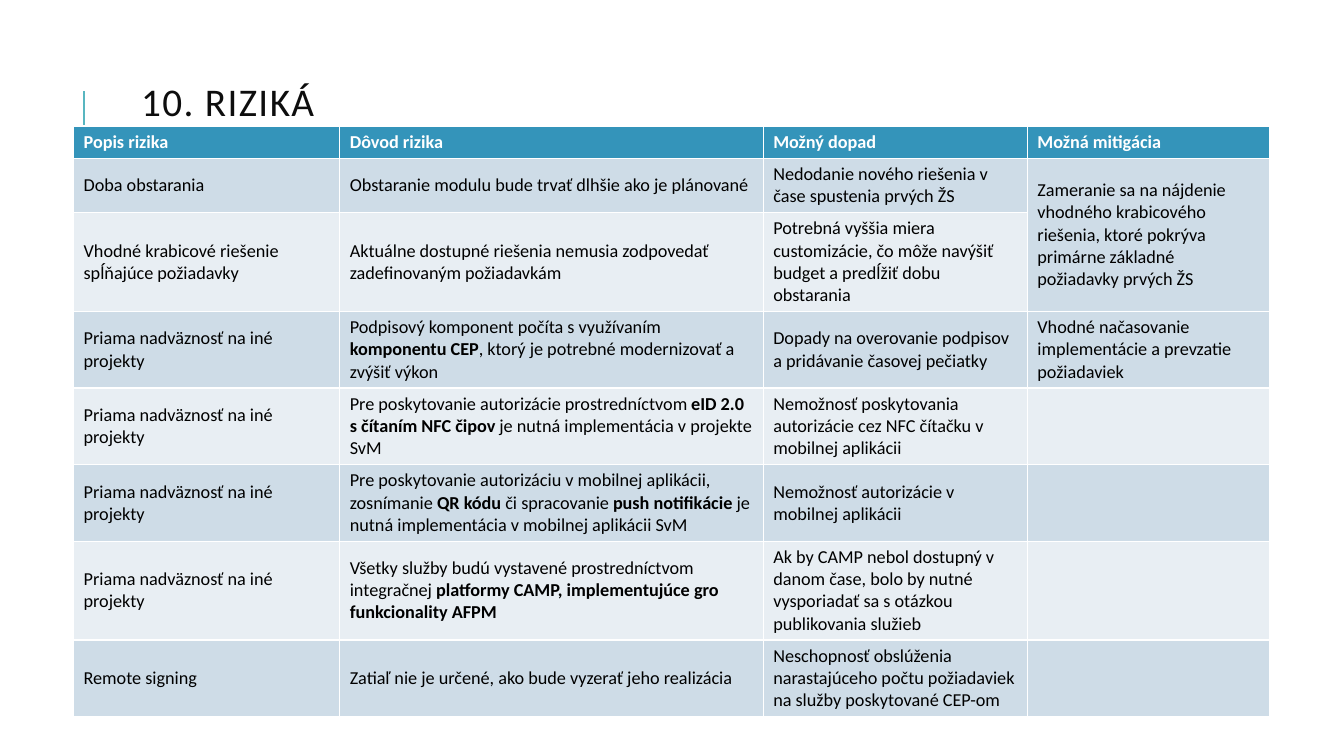
from dataclasses import dataclass

from lxml import etree
from pptx import Presentation
from pptx import util as u
from pptx.dml.color import RGBColor
from pptx.enum import shapes, text
from pptx.oxml import ns


@dataclass(frozen=True)
class Theme:
    """Colours, font and type sizes of the slide."""
    font: str = "Calibri"
    title: str = "0D0D0D"
    rule: str = "58B6C0"
    head: str = "3494BA"
    bands: tuple = ("CEDCE7", "E8EEF3")
    light: str = "FFFFFF"
    dark: str = "000000"
    big: float = 28
    small: float = 13


THEME = Theme()
LINK = "Priama nadväznosť na iné projekty"
HEADS = ("Popis rizika", "Dôvod rizika", "Možný dopad", "Možná mitigácia")
RISKS = (
    ("Doba obstarania",
     "Obstaranie modulu bude trvať dlhšie ako je plánované",
     "Nedodanie nového riešenia v čase spustenia prvých ŽS",
     "Zameranie sa na nájdenie vhodného krabicového riešenia, ktoré pokrýva "
     "primárne základné požiadavky prvých ŽS"),
    ("Vhodné krabicové riešenie spĺňajúce požiadavky",
     "Aktuálne dostupné riešenia nemusia zodpovedať zadefinovaným požiadavkám",
     "Potrebná vyššia miera customizácie, čo môže navýšiť budget a predĺžiť "
     "dobu obstarania", ""),
    (LINK,
     "Podpisový komponent počíta s využívaním *komponentu CEP*, ktorý je "
     "potrebné modernizovať a zvýšiť výkon",
     "Dopady na overovanie podpisov a pridávanie časovej pečiatky",
     "Vhodné načasovanie implementácie a prevzatie požiadaviek"),
    (LINK,
     "Pre poskytovanie autorizácie prostredníctvom *eID 2.0 s čítaním NFC "
     "čipov *je nutná implementácia v projekte SvM",
     "Nemožnosť poskytovania autorizácie cez NFC čítačku v mobilnej aplikácii",
     ""),
    (LINK,
     "Pre poskytovanie autorizáciu v mobilnej aplikácii, zosnímanie *QR kódu "
     "*či spracovanie *push notifikácie *je nutná implementácia v mobilnej "
     "aplikácii SvM",
     "Nemožnosť autorizácie v mobilnej aplikácii", ""),
    (LINK,
     "Všetky služby budú vystavené prostredníctvom integračnej *platformy "
     "CAMP, implementujúce gro funkcionality AFPM*",
     "Ak by CAMP nebol dostupný v danom čase, bolo by nutné vysporiadať sa "
     "s otázkou publikovania služieb", ""),
    ("Remote signing",
     "Zatiaľ nie je určené, ako bude vyzerať jeho realizácia",
     "Neschopnosť obslúženia narastajúceho počtu požiadaviek na služby "
     "poskytované CEP-om", ""),
)
COLS = (2.64, 4.2, 2.62, 2.4)
ROWS = (0.32, 0.54, 0.98, 0.76, 0.76, 0.76, 0.98, 0.76)


def rgb(code):
    """Turn a hex code into a colour."""
    return RGBColor.from_string(code)


def add_run(para, words, size, color, bold=False):
    """Add one styled run to a paragraph."""
    run = para.add_run()
    run.text = words
    font = run.font
    font.name, font.size, font.bold = THEME.font, u.Pt(size), bold
    font.color.rgb = rgb(color)
    return run


def add_title(slide, left, top, width, height):
    """Place the heading and the vertical rule to its left."""
    x, y = u.Inches(left - 0.57), top + 0.27
    rule = slide.shapes.add_connector(
        shapes.MSO_CONNECTOR.STRAIGHT, x, u.Inches(y + 1), x, u.Inches(y))
    rule.line.color.rgb = rgb(THEME.rule)
    rule.line.width = u.Pt(1.5)
    etree.SubElement(rule._element.spPr, ns.qn("a:effectLst"))

    box = slide.shapes.add_textbox(*map(u.Inches, (left, top, width, height)))
    frame = box.text_frame
    frame.word_wrap = True
    frame.vertical_anchor = text.MSO_ANCHOR.MIDDLE
    frame.margin_left = frame.margin_right = 0
    frame.margin_top = frame.margin_bottom = 0
    para = frame.paragraphs[0]
    para.line_spacing = 0.8
    run = add_run(para, "10. RIZIKÁ", THEME.big, THEME.title)
    run.font._element.set("spc", "100")


def fill_cell(cell, words, fill, color, bold):
    """Fill a cell; text between asterisks is bold."""
    cell.fill.solid()
    cell.fill.fore_color.rgb = rgb(fill)
    cell.vertical_anchor = text.MSO_ANCHOR.MIDDLE
    para = cell.text_frame.paragraphs[0]
    para.font.size = u.Pt(THEME.small)
    for i, part in enumerate(words.split("*")):
        if part:
            add_run(para, part, THEME.small, color, bold or i % 2 == 1)


def add_risks(slide, left, top):
    """Place the risk table with its top left corner at the given point."""
    size = (left, top, sum(COLS), sum(ROWS))
    frame = slide.shapes.add_table(len(ROWS), len(COLS), *map(u.Inches, size))
    table = frame.table
    for col, width in zip(table.columns, COLS):
        col.width = u.Inches(width)
    for row, height in zip(table.rows, ROWS):
        row.height = u.Inches(height)
    for r, line in enumerate((HEADS,) + RISKS):
        top_row = r == 0
        fill = THEME.head if top_row else THEME.bands[(r - 1) % 2]
        color = THEME.light if top_row else THEME.dark
        for c, words in enumerate(line):
            fill_cell(table.cell(r, c), words, fill, color, top_row)
    table.cell(1, 3).merge(table.cell(2, 3))


def main():
    """Build and save the slide."""
    deck = Presentation()
    deck.slide_width, deck.slide_height = u.Inches(13.33), u.Inches(7.5)
    slide = deck.slides.add_slide(deck.slide_layouts[6])
    add_title(slide, 1.4, 0.63, 10, 0.82)
    add_risks(slide, 0.73, 1.25)
    deck.save("out.pptx")


if __name__ == "__main__":
    main()
